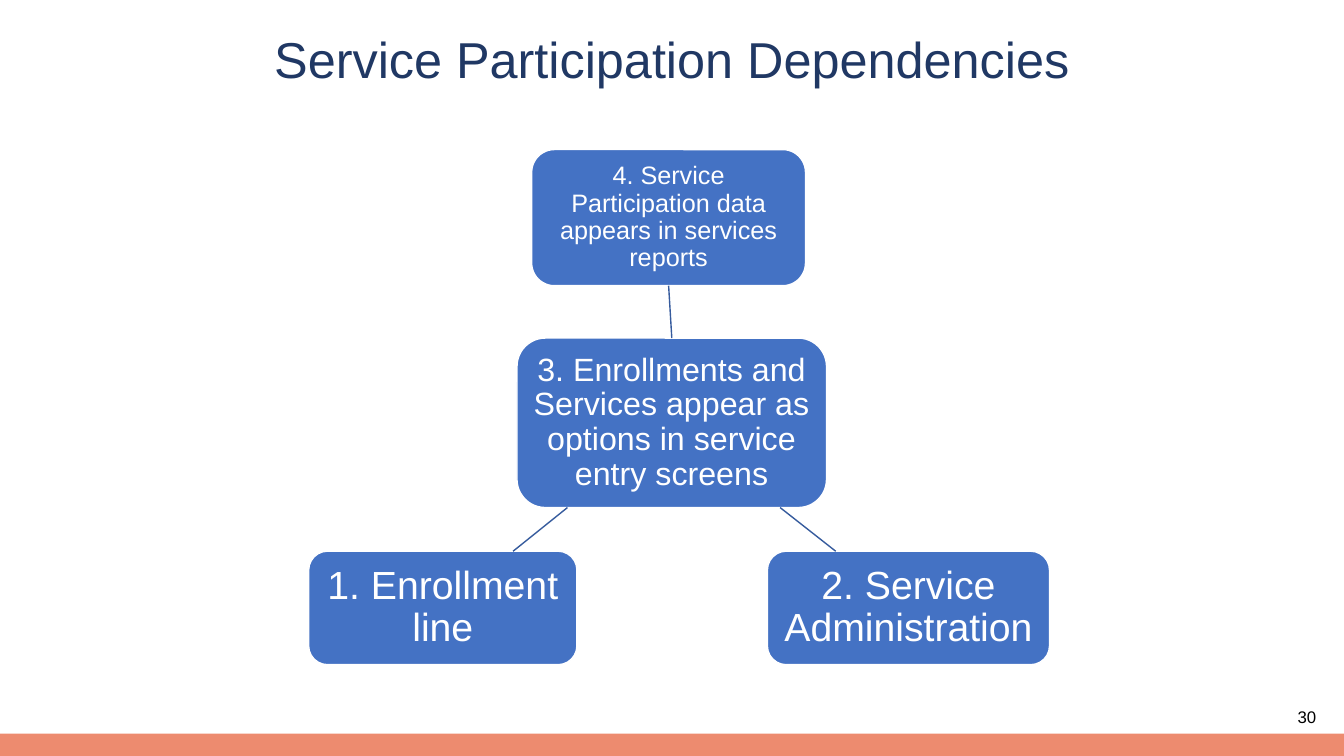
from pptx import Presentation
from pptx.dml.color import RGBColor
from pptx.enum.shapes import MSO_CONNECTOR, MSO_SHAPE
from pptx.enum.text import MSO_ANCHOR, PP_ALIGN
from pptx.oxml.ns import qn
from pptx.util import Cm, Pt
from lxml import etree

STRAIGHT = MSO_CONNECTOR.STRAIGHT
RECTANGLE, ROUNDED = MSO_SHAPE.RECTANGLE, MSO_SHAPE.ROUNDED_RECTANGLE
MIDDLE = MSO_ANCHOR.MIDDLE
CENTER, RIGHT = PP_ALIGN.CENTER, PP_ALIGN.RIGHT
TOP_SIDE, BOTTOM_SIDE = 0, 2

FONT = "Arial"
COLORS = {
    "title": "203864",
    "box": "4472C4",
    "link": "365B9D",
    "footer": "ED8B6F",
    "white": "FFFFFF",
    "black": "000000",
}
SLIDE_WIDTH, SLIDE_HEIGHT = 33.87, 19.05
FOOTER_HEIGHT = 0.56


def color(name):
    return RGBColor.from_string(COLORS[name])


def write_text(shape, text, size, color_name, alignment=CENTER, spacing=None):
    frame = shape.text_frame
    frame.word_wrap = True
    frame.vertical_anchor = MIDDLE
    paragraph = frame.paragraphs[0]
    paragraph.alignment = alignment
    paragraph.line_spacing = spacing
    run = paragraph.add_run()
    run.text = text
    run.font.name = FONT
    run.font.size = Pt(size)
    run.font.color.rgb = color(color_name)


def add_label(slide, bounds, *text_format):
    label = slide.shapes.add_textbox(*map(Cm, bounds))
    write_text(label, *text_format)


def add_filled_shape(slide, kind, bounds, fill_name):
    shape = slide.shapes.add_shape(kind, *map(Cm, bounds))
    shape.shadow.inherit = False
    shape.fill.solid()
    shape.fill.fore_color.rgb = color(fill_name)
    shape.line.fill.background()
    return shape


def add_step(slide, bounds, text, size, inset):
    step = add_filled_shape(slide, ROUNDED, bounds, "box")
    step.line.color.rgb = color("white")
    step.line.width = Pt(1)
    frame = step.text_frame
    frame.margin_left = frame.margin_right = Cm(inset)
    frame.margin_top = frame.margin_bottom = Cm(inset)
    write_text(step, text, size, "white", CENTER, 0.9)
    return step


def add_link(slide, start_x, start_y, end_x, end_y):
    link = slide.shapes.add_connector(
        STRAIGHT, Cm(start_x), Cm(start_y), Cm(end_x), Cm(end_y))
    link.line.color.rgb = color("link")
    link.line.width = Pt(1)
    etree.SubElement(link._element.spPr, qn("a:effectLst"))
    return link


def main():
    presentation = Presentation()
    presentation.slide_width = Cm(SLIDE_WIDTH)
    presentation.slide_height = Cm(SLIDE_HEIGHT)
    slide = presentation.slides.add_slide(presentation.slide_layouts[6])

    # Footer band and slide number
    add_filled_shape(slide, RECTANGLE,
                     (0, SLIDE_HEIGHT - FOOTER_HEIGHT, SLIDE_WIDTH, FOOTER_HEIGHT),
                     "footer")
    add_label(slide, (31.98, 17.7, 1.44, 0.74), "30", 12, "black", RIGHT)

    # Title
    add_label(slide, (0, 0, SLIDE_WIDTH, 3.15),
              "Service Participation Dependencies", 36, "title", CENTER, 0.9)

    # Steps, from the reports down to the setup
    reports = add_step(slide, (13.4, 3.77, 6.9, 3.43),
                       "4. Service Participation data appears in services reports",
                       18, 0.13)
    options = add_step(slide, (13.03, 8.52, 7.8, 4.27),
                       "3. Enrollments and Services appear as options in service entry screens",
                       23, 0.15)
    add_step(slide, (7.78, 13.89, 6.76, 2.86), "1. Enrollment line", 28, 0.2)
    add_step(slide, (19.34, 13.89, 7.11, 2.86), "2. Service Administration", 28, 0.2)

    # Links between the steps
    upper_link = add_link(slide, 16.93, 8.52, 16.85, 7.2)
    upper_link.begin_connect(options, TOP_SIDE)
    upper_link.end_connect(reports, BOTTOM_SIDE)
    add_link(slide, 14.3, 12.79, 12.93, 13.89)
    add_link(slide, 19.66, 12.79, 21.06, 13.89)

    presentation.save("out.pptx")


if __name__ == "__main__":
    main()
